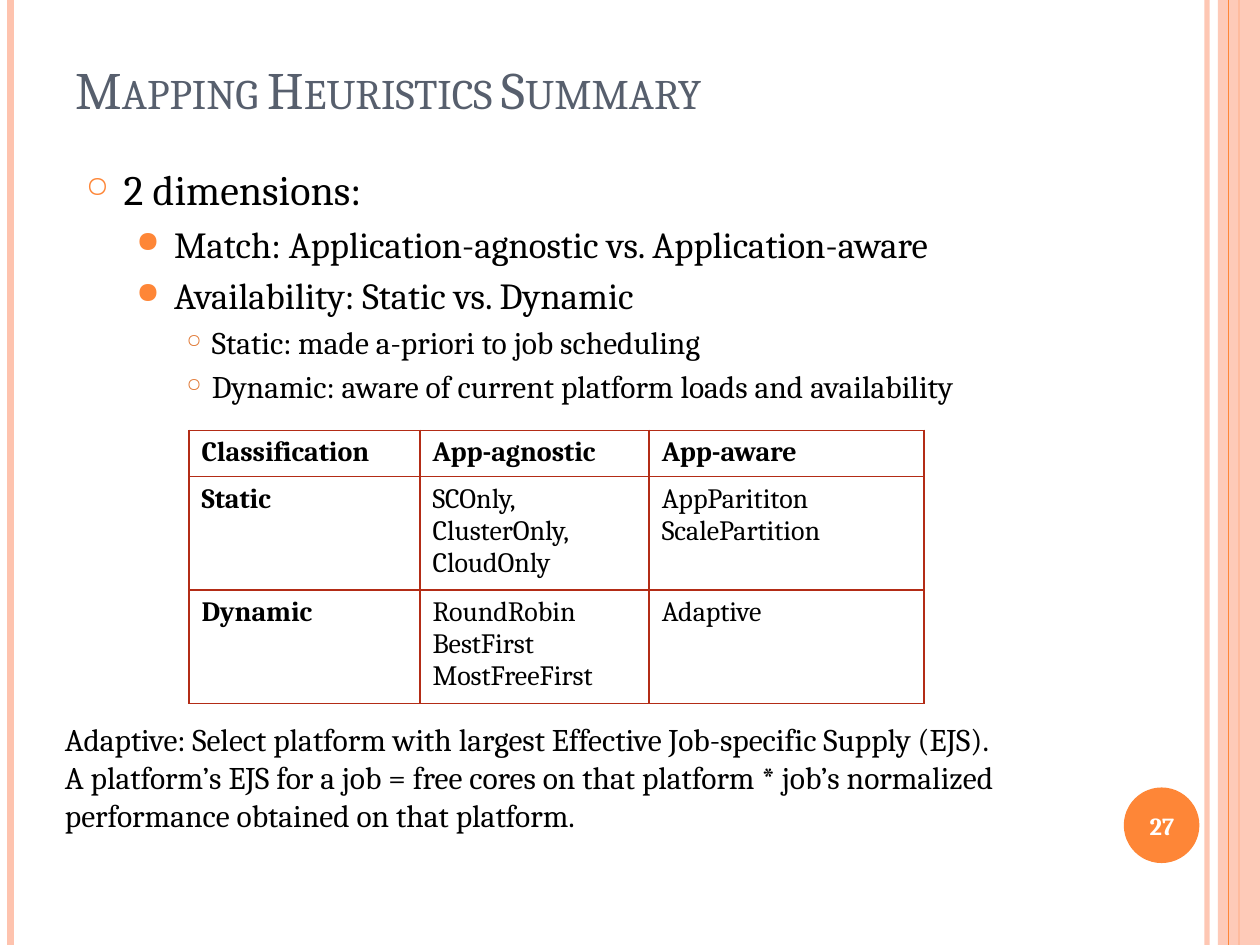
"""Build the mapping heuristics summary slide."""
from lxml.etree import SubElement
from pptx import Presentation
from pptx.dml.color import RGBColor
from pptx.enum.shapes import MSO_CONNECTOR as CONNECTOR, MSO_SHAPE as SHAPE
from pptx.enum.text import MSO_ANCHOR as ANCHOR, PP_ALIGN as ALIGN
from pptx.oxml.ns import qn
from pptx.util import Pt

ORANGE, PEACH, RED, BLACK = "FE8637", "FEC3AE", "B32C16", "000000"


def rgb(color):
    return RGBColor.from_string(color)


def write(paragraph, text, size, color=BLACK, bold=False):
    run = paragraph.add_run()
    run.text = text
    run.font.name = "Cambria"
    run.font.size = Pt(size)
    run.font.bold = bold
    run.font.color.rgb = rgb(color)
    return run


deck = Presentation()
deck.slide_width, deck.slide_height = Pt(720), Pt(540)
slide = deck.slides.add_slide(deck.slide_layouts[6])
shapes = slide.shapes

stripes = {}
for x, color, width in [(689.8, PEACH, 3), (6, PEACH, 4.5), (708, ORANGE, 1.5), (702, ORANGE, 0.75)]:
    stripe = shapes.add_connector(CONNECTOR.STRAIGHT, Pt(x), Pt(0), Pt(x), Pt(540))
    stripe.line.color.rgb = rgb(color)
    stripe.line.width = Pt(width)
    SubElement(stripe._element.spPr, qn("a:effectLst"))
    stripes[x] = stripe

band = shapes.add_shape(SHAPE.RECTANGLE, Pt(696), Pt(0), Pt(24), Pt(540))
badge = shapes.add_shape(SHAPE.OVAL, Pt(642.2), Pt(450), Pt(43.2), Pt(43.2))
for panel, color in [(band, PEACH), (badge, ORANGE)]:
    panel.shadow.inherit = False
    panel.fill.solid()
    panel.fill.fore_color.rgb = rgb(color)
    panel.line.fill.background()
stripes[702]._element.addprevious(band._element)

for part, alpha in [(band, 87), (stripes[689.8], 93)]:
    tint = next(part._element.spPr.iter(qn("a:srgbClr")))
    SubElement(tint, qn("a:alpha"), val=str(alpha * 1000))

frames = []
for left, top, width, height, anchor in [
    (36, -18, 588, 90, ANCHOR.BOTTOM),
    (640, 451.5, 48, 41, ANCHOR.MIDDLE),
    (42, 90, 657, 174, ANCHOR.TOP),
    (30, 408, 636, 73, ANCHOR.TOP),
]:
    frame = shapes.add_textbox(Pt(left), Pt(top), Pt(width), Pt(height)).text_frame
    frame.word_wrap = True
    frame.vertical_anchor = anchor
    frames.append(frame)
title, number, outline, note = frames

heading = write(title.paragraphs[0], "Mapping Heuristics Summary", 30, "575F6D")
heading.font._element.set("cap", "small")
number.paragraphs[0].alignment = ALIGN.CENTER
write(number.paragraphs[0], "27", 14, "FFFFFF", True)

levels = [
    (24, 21.6, 21.6, 6, "○", ORANGE, 70),
    (21, 50.4, 21.6, 4.2, "●", ORANGE, 80),
    (18, 72, 14.4, 3.6, "○", "E07631", 60),
]
points = [
    (0, "2 dimensions:"),
    (1, "Match: Application-agnostic vs. Application-aware"),
    (1, "Availability: Static vs. Dynamic"),
    (2, "Static: made a-priori to job scheduling"),
    (2, "Dynamic: aware of current platform loads and availability"),
]
for i, (level, text) in enumerate(points):
    size, margin, hanging, before, bullet, color, scale = levels[level]
    point = outline.add_paragraph() if i else outline.paragraphs[0]
    point.level = level
    point.space_before = Pt(before)
    props = point._p.get_or_add_pPr()
    props.set("marL", str(Pt(margin)))
    props.set("indent", str(-Pt(hanging)))
    SubElement(SubElement(props, qn("a:buClr")), qn("a:srgbClr"), val=color)
    SubElement(props, qn("a:buSzPct"), val=str(scale * 1000))
    SubElement(props, qn("a:buChar"), char=bullet)
    write(point, text, size)

rows = [
    ["Classification", "App-agnostic", "App-aware"],
    ["Static", "SCOnly, ClusterOnly, CloudOnly", "AppParititon\nScalePartition"],
    ["Dynamic", "RoundRobin\nBestFirst\nMostFreeFirst", "Adaptive"],
]
grid = shapes.add_table(3, 3, Pt(108), Pt(246), Pt(420), Pt(150)).table
grid.horz_banding = False
for column, width in zip(grid.columns, [132, 131, 157]):
    column.width = Pt(width)
for row, height in zip(grid.rows, [25.2, 62.4, 62.4]):
    row.height = Pt(height)
for r, row in enumerate(rows):
    for c, text in enumerate(row):
        cell = grid.cell(r, c)
        props = cell._tc.get_or_add_tcPr()
        for side in ("lnL", "lnR", "lnT", "lnB"):
            border = SubElement(props, qn(f"a:{side}"), w=str(Pt(1)))
            SubElement(SubElement(border, qn("a:solidFill")), qn("a:srgbClr"), val=RED)
        cell.fill.background()
        for i, line in enumerate(text.split("\n")):
            entry = cell.text_frame.add_paragraph() if i else cell.text_frame.paragraphs[0]
            write(entry, line, 16, bold=r == 0 or c == 0)

for i, text in enumerate([
    "Adaptive: Select platform with largest Effective Job-specific Supply (EJS).",
    "A platform’s EJS for a job = free cores on that platform * job’s normalized "
    "performance obtained on that platform.",
]):
    write(note.add_paragraph() if i else note.paragraphs[0], text, 18)

deck.save("out.pptx")
